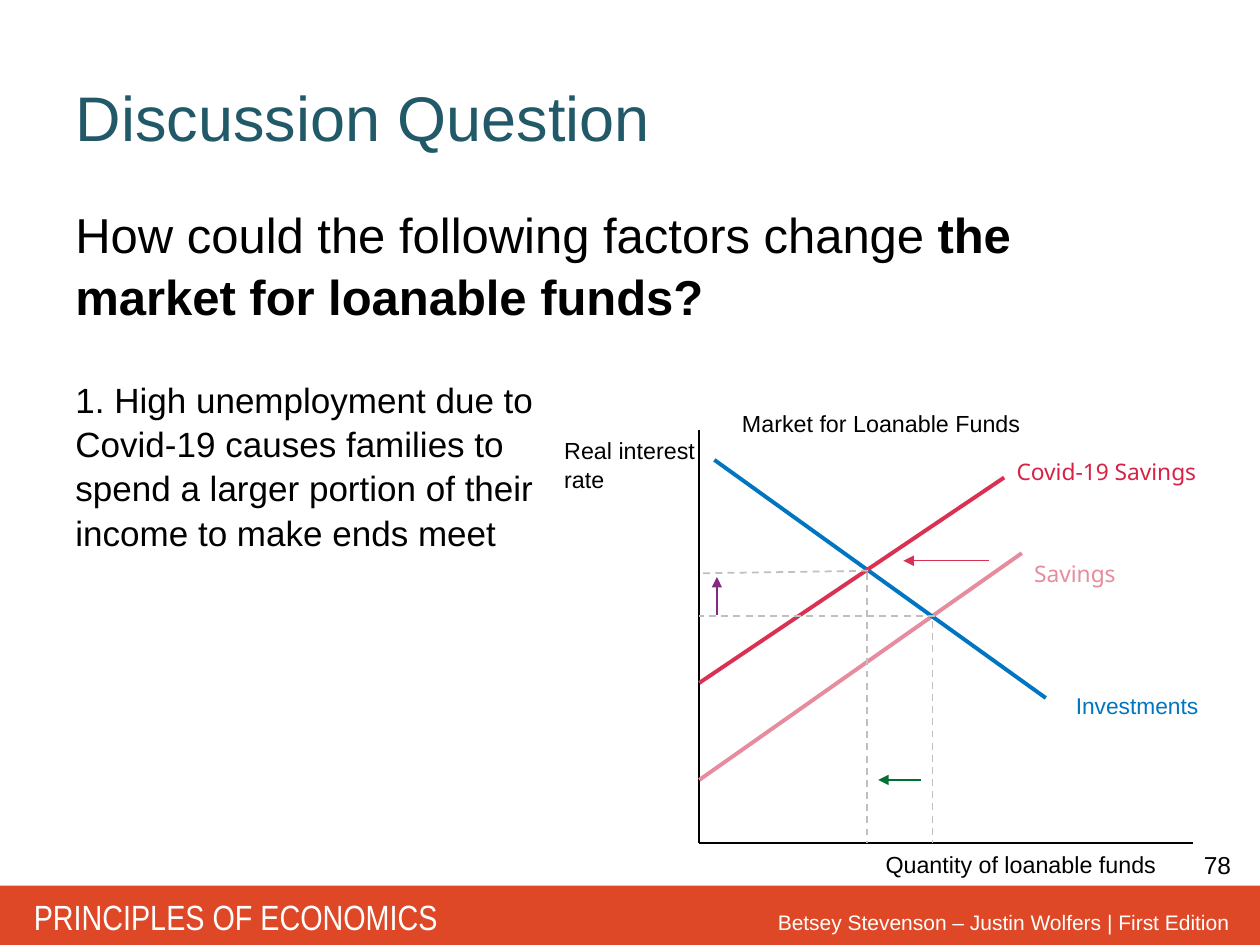
from lxml import etree
from pptx import Presentation, util as u
from pptx.dml.color import RGBColor
from pptx.enum import dml, shapes, text
from pptx.oxml.ns import qn

COLORS = {
    "black": "000000", "white": "FFFFFF", "band": "DE4826", "title": "215968",
    "savings": "E78B9E", "investments": "0075C1", "covid": "DA3052",
    "covid_label": "D72246", "rate": "842A82", "quantity": "007032", "guide": "BFBFBF",
}

prs = Presentation()
prs.slide_width, prs.slide_height = u.Inches(10), u.Inches(7.5)
COL, ROW = prs.slide_width / 100, prs.slide_height / 75
s = prs.slides.add_slide(prs.slide_layouts[5])


def grid(x, y):
    return round(x * COL), round(y * ROW)


def write(sp, runs, size, color, font="Arial", align=text.PP_ALIGN.LEFT,
          anchor=text.MSO_ANCHOR.TOP, spacing=1.0):
    tf = sp.text_frame
    for name, value in {"word_wrap": True, "vertical_anchor": anchor,
                        "auto_size": text.MSO_AUTO_SIZE.NONE}.items():
        setattr(tf, name, value)
    p = tf.paragraphs[0]
    p.alignment, p.line_spacing = align, spacing
    for words, bold in runs:
        r = p.add_run()
        r.text = words
        for name, value in {"size": u.Pt(size), "name": font, "bold": bold}.items():
            setattr(r.font, name, value)
        r.font.color.rgb = RGBColor.from_string(COLORS[color])


band = s.shapes.add_shape(shapes.MSO_SHAPE.RECTANGLE, *grid(0, 70.3), *grid(100, 4.7))
band.shadow.inherit = False
band.fill.solid()
band.fill.fore_color.rgb = RGBColor.from_string(COLORS["band"])
band.line.fill.background()

title = s.shapes.title
title.left, title.top = grid(5, 3)
title.width, title.height = grid(90, 12.5)
write(title, [("Discussion Question", False)], 36, "title", anchor=text.MSO_ANCHOR.MIDDLE)

right = {"align": text.PP_ALIGN.RIGHT}
loose = {"spacing": 1.05}
question = [("How could the following factors change ", False),
            ("the market for loanable funds?", True)]
factor = ("1. High unemployment due to Covid-19 causes families to spend "
          "a larger portion of their income to make ends meet")
boxes = [
    (58.3, 71.7, 40.3, 3, [("Betsey Stevenson – Justin Wolfers | First Edition", False)],
     12, "white", right),
    (1.7, 70.6, 36.9, 4.4, [("PRINCIPLES OF ECONOMICS", False)],
     20, "white", {"font": "Arial Narrow"}),
    (89.6, 67, 9.1, 3.4, [("78", False)], 14, "black", right),
    (5, 15.5, 90, 10.5, question, 28, "black", loose),
    (5, 29.4, 39.5, 40.3, [(factor, False)], 20, "black", loose),
    (43.8, 34, 13.6, 5.5, [("Real interest rate", False)], 13.3, "black", loose),
    (69.3, 67, 25.4, 3.2, [("Quantity of loanable funds", False)], 13.3, "black", {}),
    (57.9, 32, 34.5, 3.2, [("Market for Loanable Funds", False)], 13.3, "black", {}),
    (81.1, 43.9, 13.6, 3.2, [("Savings", False)], 13, "savings", {"font": "Noto Sans"}),
    (84.4, 54.4, 15, 3.2, [("Investments", False)], 13, "investments", {}),
    (79.7, 35.8, 17.3, 3.2, [("Covid-19 Savings", False)], 13, "covid_label",
     {"font": "Noto Sans"}),
]
for x, y, w, h, runs, size, color, style in boxes:
    write(s.shapes.add_textbox(*grid(x, y), *grid(w, h)), runs, size, color, **style)

X0, Y0 = 55.5, 66.9
lines = [
    (X0, 34.1, X0, Y0, "black", 1, None),
    (94.7, Y0, X0, Y0, "black", 1, None),
    (X0, 61.9, 81.1, 43.9, "savings", 2.25, None),
    (56.7, 36.5, 83, 55.4, "investments", 2.25, None),
    (X0, 54.2, 79.7, 37.9, "covid", 2.25, None),
    (71.7, 44.5, 78.5, 44.5, "covid", 0.75, "arrow"),
    (56.9, 45.8, 56.9, 48.8, "rate", 0.75, "arrow"),
    (74, 49.3, 74, Y0, "guide", 1, "dash"),
    (68.8, 45.5, 68.8, Y0, "guide", 1, "dash"),
    (69.7, 61.9, 73.1, 61.9, "quantity", 0.75, "arrow"),
    (74.2, 48.9, X0, 48.9, "guide", 1, "dash"),
    (68.9, 45.3, X0, 45.5, "guide", 1, "dash"),
]
for x1, y1, x2, y2, color, width, kind in lines:
    ln = s.shapes.add_connector(shapes.MSO_CONNECTOR.STRAIGHT, *grid(x1, y1), *grid(x2, y2))
    ln.line.color.rgb = RGBColor.from_string(COLORS[color])
    ln.line.width = u.Pt(width)
    props = ln._element.spPr
    if kind == "dash":
        ln.line.dash_style = dml.MSO_LINE.DASH
    if kind == "arrow":
        etree.SubElement(props.find(qn("a:ln")), qn("a:headEnd"), type="triangle")
    etree.SubElement(props, qn("a:effectLst"))

prs.save("out.pptx")
